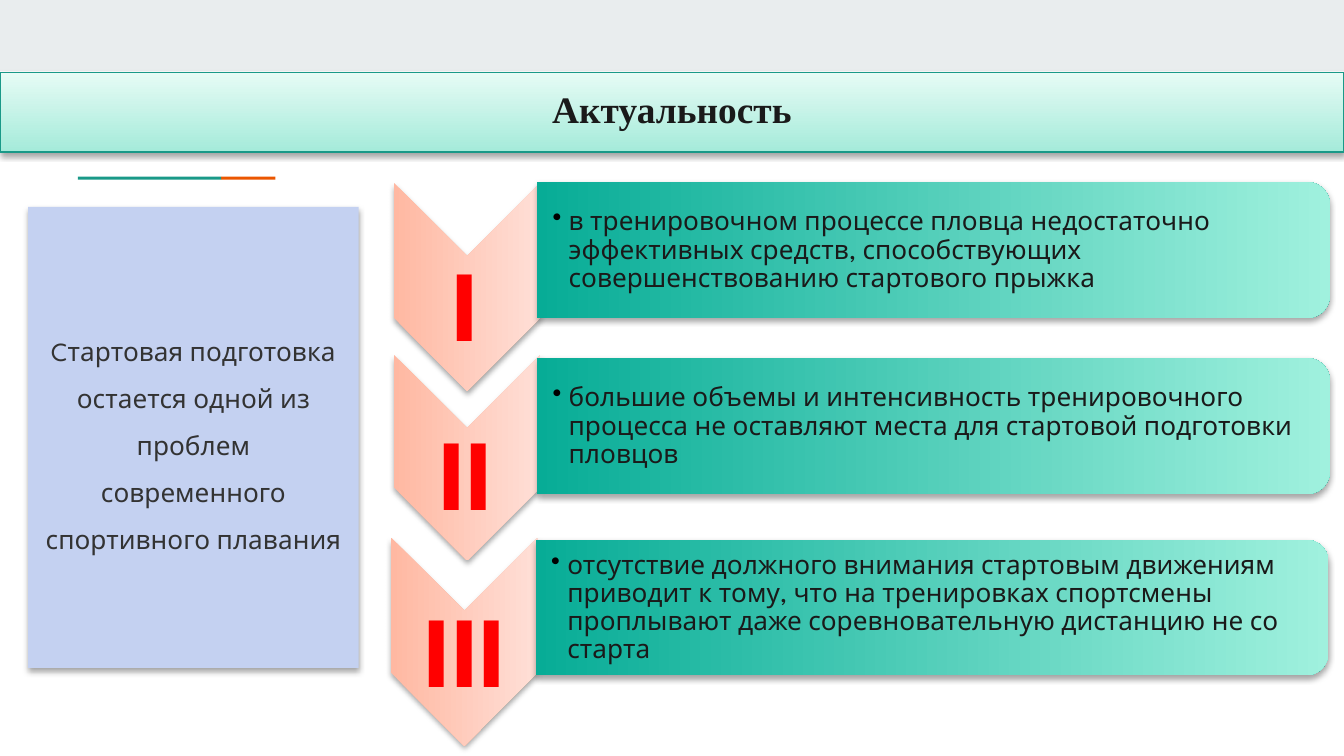
"""Build the slide on why start training matters in swimming."""
from dataclasses import dataclass

from lxml import etree
from pptx import Presentation
from pptx import util as u
from pptx.dml.color import RGBColor
from pptx.enum import shapes, text
from pptx.oxml import ns

TEAL = RGBColor(0x1A, 0x99, 0x88)
ORANGE = RGBColor(0xEB, 0x56, 0x00)
BAND = RGBColor(0xE9, 0xED, 0xEE)
LAVENDER = RGBColor(0xC4, 0xD1, 0xF1)
BLACK = RGBColor(0x00, 0x00, 0x00)
WHITE = RGBColor(0xFF, 0xFF, 0xFF)
INK = RGBColor(0x1A, 0x1A, 0x1A)
GREY = RGBColor(0x33, 0x33, 0x33)
RED = RGBColor(0xFF, 0x00, 0x00)
TITLE_FILL = (RGBColor(0xE6, 0xFB, 0xF5), RGBColor(0xA5, 0xEB, 0xDA))
CHEVRON_FILL = (RGBColor(0xFF, 0xB8, 0xA2), RGBColor(0xFF, 0xDF, 0xD7))
BAR_FILL = (RGBColor(0x07, 0xAC, 0x96), RGBColor(0xA0, 0xF1, 0xDE))

BODY_FONT = "League Spartan"
TITLE_FORMAT = {"name": "Times New Roman", "size": u.Pt(20), "bold": True}
BODY_FORMAT = {"name": BODY_FONT, "size": u.Pt(14), "bold": False}
NUMERAL_FORMAT = {"name": BODY_FONT, "size": u.Pt(54), "bold": True}

CHEVRON_WIDTH = 78.5
BAR_WIDTH, BAR_HEIGHT = 424.8, 72.7
TEXT_WIDTH, TEXT_HEIGHT = 421.2, 65.5


@dataclass(frozen=True)
class Box:
    """Place and size in points, as seen on the slide."""

    left: float
    top: float
    width: float
    height: float

    def lengths(self) -> list:
        """Return the four lengths in slide units."""
        return [u.Pt(value) for value in (self.left, self.top, self.width, self.height)]

    def before_quarter_turn(self) -> "Box":
        """Return the box that a turn of 90 degrees brings to this one."""
        shift = (self.width - self.height) / 2
        return Box(self.left + shift, self.top - shift, self.height, self.width)


@dataclass(frozen=True)
class Reason:
    """One numbered reason with its chevron and bar."""

    numeral: str
    wording: str
    chevron: Box
    bar_left: float
    bar_top: float
    numeral_box: Box


REASONS = (
    Reason(
        "I",
        "в тренировочном процессе пловца недостаточно эффективных средств, "
        "способствующих совершенствованию стартового прыжка",
        Box(211, 97.9, CHEVRON_WIDTH, 111.6), 287.6, 97.6,
        Box(234.7, 125.3, 29.5, 72.7),
    ),
    Reason(
        "II",
        "большие объемы и интенсивность тренировочного процесса "
        "не оставляют места для стартовой подготовки пловцов",
        Box(211, 190.1, CHEVRON_WIDTH, 110.2), 287.6, 191.9,
        Box(227.5, 216, 44.6, 72.7),
    ),
    Reason(
        "III",
        "отсутствие должного внимания стартовым движениям приводит к тому, "
        "что на тренировках спортсмены проплывают даже соревновательную "
        "дистанцию не со старта",
        Box(209.5, 288, CHEVRON_WIDTH, 111.6), 286.9, 289.1,
        Box(219.6, 311, 59.8, 72.7),
    ),
)


def set_all(target, values: dict) -> None:
    """Set each named attribute on the target."""
    for name, value in values.items():
        setattr(target, name, value)


def add_color(parent, color: RGBColor):
    """Append an RGB colour element."""
    return etree.SubElement(parent, ns.qn("a:srgbClr"), val=str(color))


def add_shadow(shape) -> None:
    """Give the shape a soft shadow below it."""
    effects = shape._element.spPr.find(ns.qn("a:effectLst"))
    shadow = etree.SubElement(
        effects, ns.qn("a:outerShdw"), blurRad=str(u.Pt(3.1)), dist=str(u.Pt(1.8)),
        dir="5400000", algn="ctr", rotWithShape="0",
    )
    etree.SubElement(add_color(shadow, BLACK), ns.qn("a:alpha"), val="35000")


def add_flat(slide, kind, box: Box, color: RGBColor):
    """Add a plain shape of one colour."""
    shape = slide.shapes.add_shape(kind, *box.lengths())
    shape.shadow.inherit = False
    shape.fill.solid()
    shape.fill.fore_color.rgb = color
    shape.line.fill.background()
    return shape


def add_gradient(slide, kind, box: Box, colors: tuple, angle: float):
    """Add a shadowed shape with a two-colour gradient."""
    shape = add_flat(slide, kind, box, colors[0])
    shape.fill.gradient()
    shape.fill.gradient_angle = angle
    for stop, color in zip(shape.fill.gradient_stops, colors):
        stop.color.rgb = color
    add_shadow(shape)
    return shape


def add_turned(slide, kind, box: Box, colors: tuple) -> None:
    """Add a gradient shape turned by 90 degrees."""
    shape = add_gradient(slide, kind, box.before_quarter_turn(), colors, 90)
    shape.rotation = 90


def write(shape, wording: str, font: dict, color: RGBColor, frame: dict, layout: dict):
    """Write one paragraph into the shape and return it."""
    set_all(shape.text_frame, frame)
    paragraph = shape.text_frame.paragraphs[0]
    set_all(paragraph, layout)
    run = paragraph.add_run()
    run.text = wording
    set_all(run.font, font)
    run.font.color.rgb = color
    return paragraph


def add_bullet(paragraph) -> None:
    """Give the paragraph a black bullet and a hanging indent."""
    properties = paragraph._p.get_or_add_pPr()
    properties.set("marL", str(u.Pt(8.64)))
    properties.set("indent", str(u.Pt(-8.64)))
    add_color(etree.SubElement(properties, ns.qn("a:buClr")), BLACK)
    etree.SubElement(properties, ns.qn("a:buChar"), char="•")


def outline_text(paragraph) -> None:
    """Draw a white outline around the letters."""
    line = etree.Element(ns.qn("a:ln"), w=str(u.Pt(1.5)))
    add_color(etree.SubElement(line, ns.qn("a:solidFill")), WHITE)
    paragraph.runs[0].font._element.insert(0, line)


def add_reason(slide, reason: Reason) -> None:
    """Add the chevron, bar and wording of one reason."""
    bar = Box(reason.bar_left, reason.bar_top, BAR_WIDTH, BAR_HEIGHT)
    add_turned(slide, shapes.MSO_SHAPE.CHEVRON, reason.chevron, CHEVRON_FILL)
    add_turned(slide, shapes.MSO_SHAPE.ROUND_2_SAME_RECTANGLE, bar, BAR_FILL)
    box = Box(bar.left + 0.4, bar.top + 3.9, TEXT_WIDTH, TEXT_HEIGHT)
    frame = {
        "word_wrap": True, "vertical_anchor": text.MSO_ANCHOR.MIDDLE,
        "margin_left": u.Pt(8), "margin_right": u.Pt(0.7),
        "margin_top": u.Pt(0.7), "margin_bottom": u.Pt(0.7),
    }
    label = slide.shapes.add_textbox(*box.lengths())
    add_bullet(write(label, reason.wording, BODY_FORMAT, INK, frame, {"line_spacing": 0.9}))


def add_numeral(slide, reason: Reason) -> None:
    """Add the large numeral of one reason."""
    label = slide.shapes.add_textbox(*reason.numeral_box.lengths())
    frame = {"word_wrap": False, "auto_size": text.MSO_AUTO_SIZE.SHAPE_TO_FIT_TEXT}
    layout = {"alignment": text.PP_ALIGN.CENTER}
    outline_text(write(label, reason.numeral, NUMERAL_FORMAT, RED, frame, layout))


def main() -> None:
    """Build and save the slide."""
    presentation = Presentation()
    set_all(presentation, {"slide_width": u.Pt(720), "slide_height": u.Pt(405)})
    slide = presentation.slides.add_slide(presentation.slide_layouts[6])
    rectangle = shapes.MSO_SHAPE.RECTANGLE
    add_flat(slide, rectangle, Box(0, 0, 720, 38.2), BAND)
    add_flat(slide, rectangle, Box(118.5, 94.7, 29, 1.6), ORANGE)
    add_flat(slide, rectangle, Box(41.8, 94.7, 76.7, 1.6), TEAL)
    title = add_gradient(slide, rectangle, Box(0, 38.9, 720, 42.5), TITLE_FILL, 270)
    title.line.color.rgb = TEAL
    title.line.width = u.Pt(0.75)
    frame = {"word_wrap": True, "vertical_anchor": text.MSO_ANCHOR.TOP, "margin_top": u.Pt(7.2)}
    layout = {"alignment": text.PP_ALIGN.CENTER}
    write(title, "Актуальность", TITLE_FORMAT, INK, frame, layout)
    panel = add_flat(slide, rectangle, Box(15.1, 110.9, 177.1, 247), LAVENDER)
    add_shadow(panel)
    frame = {"word_wrap": True, "vertical_anchor": text.MSO_ANCHOR.MIDDLE}
    layout |= {"line_spacing": 1.5, "space_after": u.Pt(12)}
    wording = "Cтартовая подготовка остается одной из проблем современного спортивного плавания"
    write(panel, wording, BODY_FORMAT, GREY, frame, layout)
    for add_part in (add_reason, add_numeral):
        for reason in REASONS:
            add_part(slide, reason)
    presentation.save("out.pptx")


if __name__ == "__main__":
    main()
